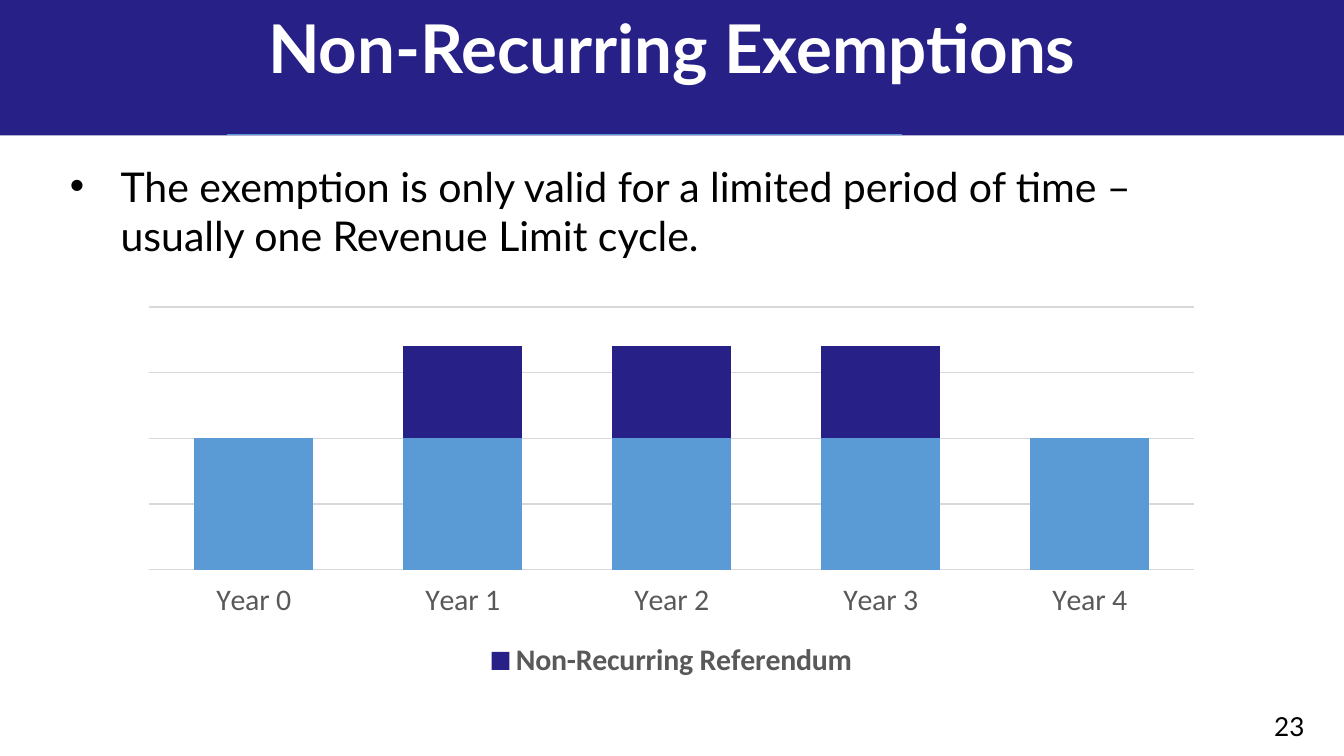
from lxml.etree import SubElement as Sub
from pptx import Presentation
from pptx.chart.data import CategoryChartData as Data
from pptx.dml.color import RGBColor
from pptx.enum.chart import XL_CHART_TYPE as Kind, XL_LEGEND_POSITION as Spot
from pptx.enum.chart import XL_TICK_LABEL_POSITION as Label, XL_TICK_MARK as Tick
from pptx.enum.shapes import MSO_CONNECTOR as Link, MSO_SHAPE as Shape
from pptx.enum.text import PP_ALIGN as Align
from pptx.oxml.ns import qn
from pptx.util import Cm, Pt

NAVY = RGBColor(0x26, 0x20, 0x87)
BLUE = RGBColor(0x5B, 0x9B, 0xD5)
GRAY = RGBColor(0x59, 0x59, 0x59)
PALE = RGBColor(0xD9, 0xD9, 0xD9)
BLACK = RGBColor(0, 0, 0)
WHITE = RGBColor(255, 255, 255)


def add_box(x, y, w, h):
    frame = slide.shapes.add_textbox(Cm(x), Cm(y), Cm(w), Cm(h)).text_frame
    frame.word_wrap = True
    return frame.paragraphs[0]


def add_run(para, text, size, color, bold=False):
    run = para.add_run()
    run.text = text
    font = run.font
    font.name, font.size, font.bold = "Lato", Pt(size), bold
    font.color.rgb = color


deck = Presentation()
deck.slide_width, deck.slide_height = Cm(25.4), Cm(14.29)
slide = deck.slides.add_slide(deck.slide_layouts[6])

# Title band
band = slide.shapes.add_shape(Shape.RECTANGLE, Cm(-0.02), 0, Cm(25.42), Cm(2.56))
band.shadow.inherit = False
band.fill.solid()
band.fill.fore_color.rgb = NAVY
band.line.fill.background()

# Bullet
para = add_box(1.07, 2.92, 22.76, 2.13)
para.space_after = Pt(4.5)
props = para._p.get_or_add_pPr()
props.set("marL", str(Cm(0.96)))
props.set("indent", str(Cm(-0.96)))
Sub(props, qn("a:buFont")).set("typeface", "Arial")
Sub(props, qn("a:buChar")).set("char", "•")
add_run(para, "The exemption is only valid for a limited period of time –", 22, BLACK)
para.add_line_break()
add_run(para, "usually one Revenue Limit cycle.", 22, BLACK)

# Accent line under the band
rule = slide.shapes.add_connector(Link.STRAIGHT, Cm(4.29), Cm(2.54), Cm(17.04), Cm(2.54))
rule.line.color.rgb = BLUE
rule.line.width = Pt(0.5)
Sub(rule._element.spPr, qn("a:effectLst"))

# Title
para = add_box(0, 0, 25.4, 2.56)
para.alignment = Align.CENTER
para.space_after = Pt(30)
add_run(para, "Non-Recurring Exemptions", 36, WHITE, True)

# Stacked columns
data = Data()
data.categories = [f"Year {n}" for n in range(5)]
data.add_series("Series 1", [100] * 5)
data.add_series("Non-Recurring Referendum", [0, 70, 70, 70, 0])
chart = slide.shapes.add_chart(
    Kind.COLUMN_STACKED, Cm(2.41), Cm(5.66), Cm(20.57), Cm(7.29), data).chart
chart.has_title = False
chart.font.name, chart.font.size = "Calibri", Pt(16)
chart.font.color.rgb = BLACK
plot = chart.plots[0]
plot.gap_width, plot.overlap = 75, 100
plot.vary_by_categories = False
for series, color in zip(plot.series, (BLUE, NAVY)):
    series.format.fill.solid()
    series.format.fill.fore_color.rgb = color

# Axes
years = chart.category_axis
years.major_tick_mark = years.minor_tick_mark = Tick.NONE
years.tick_label_position = Label.LOW
years.format.line.color.rgb = PALE
years.format.line.width = Pt(0.75)
scale = chart.value_axis
scale.visible = False
scale.minimum_scale, scale.maximum_scale, scale.major_unit = 0, 200, 50
scale.has_major_gridlines = True
grid = scale.major_gridlines.format.line
grid.color.rgb = PALE
grid.width = Pt(0.75)

# Legend without the base series
chart.has_legend = True
legend = chart.legend
legend.position = Spot.BOTTOM
legend.include_in_layout = False
for font in (years.tick_labels.font, legend.font):
    font.name, font.size = "Calibri", Pt(16)
    font.color.rgb = GRAY
legend.font.bold = True
entry = Sub(legend._element, qn("c:legendEntry"))
Sub(entry, qn("c:idx")).set("val", "0")
Sub(entry, qn("c:delete")).set("val", "1")
legend._element.find(qn("c:legendPos")).addnext(entry)

# Page number
para = add_box(23.83, 13.31, 1.4, 0.64)
add_run(para, "23", 14, BLACK)

deck.save("out.pptx")
